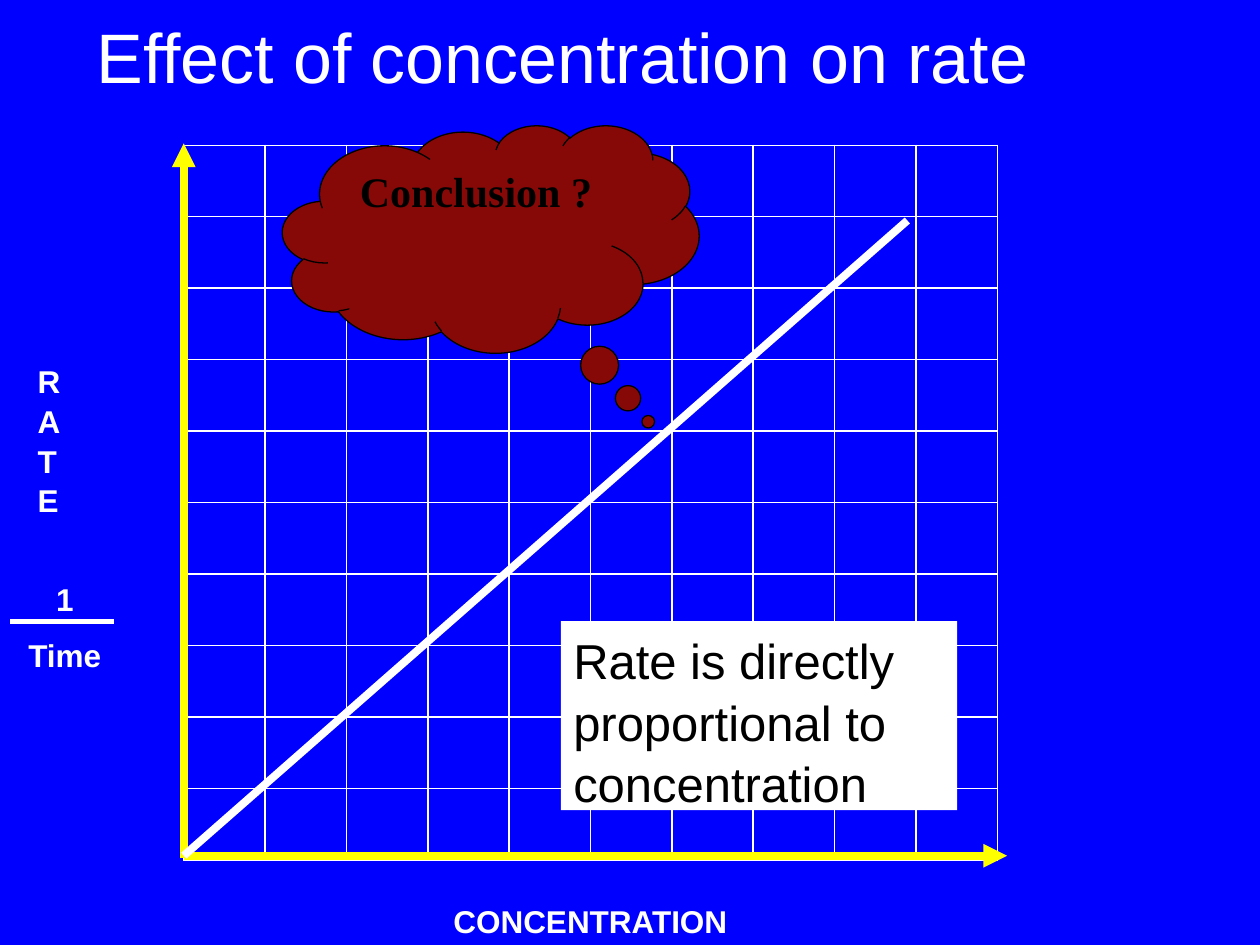
import pptx
import pptx.util
import pptx.dml.color
import pptx.enum.shapes
import pptx.enum.text
import pptx.oxml
import pptx.oxml.ns

Pt = pptx.util.Pt
SHAPE = pptx.enum.shapes.MSO_SHAPE
ALIGN = pptx.enum.text.PP_ALIGN

COLORS = {"blue": "0000FF", "white": "FFFFFF", "yellow": "FFFF00",
          "maroon": "860908", "black": "000000"}

HEADING = {"size": Pt(40), "name": "Arial", "bold": False}
LABEL = {"size": Pt(18), "name": "Arial", "bold": True}
ANSWER = {"size": Pt(28), "name": "Arial", "bold": False}
QUESTION = {"size": Pt(24), "name": "Times New Roman", "bold": True}

# paragraphs, (left, top, width, height), font, alignment
LABELS = [
    (["Effect of concentration on rate"], (48, 2, 644, 55), HEADING, ALIGN.LEFT),
    (["\v".join("RATE")], (14.4, 202.5, 79, 94), LABEL, ALIGN.LEFT),
    (["CONCENTRATION"], (252, 511, 255, 29), LABEL, ALIGN.LEFT),
    (["1", "Time"], (0, 327, 74, 61), LABEL, ALIGN.CENTER),
]
CONCLUSION = "Conclusion ?"
FINDING = "Rate is directly proportional to concentration"

GRID_COUNT = 10
GRID_BOX = (105, 83, 465, 408.5)
ORIGIN = (105, 489)
# start, end, colour, width, arrow
LINES = [
    ((105, 490.5), (105, 82), "yellow", 4.5, True),
    (ORIGIN, (575.5, 489), "yellow", 4.5, True),
    (ORIGIN, (518.5, 126), "white", 4.5, False),
]
FRACTION_BAR = ((5.75, 355), (65, 355), "white", 3, False)


def rgb(color):
    return pptx.dml.color.RGBColor.from_string(COLORS[color])


def points(values):
    return [Pt(value) for value in values]


def write(frame, paragraphs, font, color, align, spacing=1.05):
    frame.word_wrap = True
    frame.vertical_anchor = pptx.enum.text.MSO_ANCHOR.TOP
    frame.text = "\n".join(paragraphs)
    for index, paragraph in enumerate(frame.paragraphs):
        paragraph.alignment = align
        paragraph.line_spacing = spacing
        if index:
            paragraph.space_before = Pt(9)
        for key, value in font.items():
            setattr(paragraph.font, key, value)
        paragraph.font.color.rgb = rgb(color)


def add_label(slide, paragraphs, box, font, align):
    label = slide.shapes.add_textbox(*points(box))
    write(label.text_frame, paragraphs, font, "white", align)


def add_filled(slide, kind, box, color):
    shape = slide.shapes.add_shape(kind, *points(box))
    shape.shadow.inherit = False
    shape.fill.solid()
    shape.fill.fore_color.rgb = rgb(color)
    return shape


def add_line(slide, start, end, color, width, arrow):
    line = slide.shapes.add_connector(
        pptx.enum.shapes.MSO_CONNECTOR.STRAIGHT, *points(start + end))
    line.line.color.rgb = rgb(color)
    line.line.width = Pt(width)
    if arrow:
        tail = pptx.oxml.parse_xml(
            f'<a:tailEnd {pptx.oxml.ns.nsdecls("a")} type="triangle"/>')
        line.line._get_or_add_ln().append(tail)
    line._element.spPr.append(
        pptx.oxml.parse_xml(f'<a:effectLst {pptx.oxml.ns.nsdecls("a")}/>'))


def add_grid(slide):
    left, top, width, height = GRID_BOX
    grid = slide.shapes.add_table(GRID_COUNT, GRID_COUNT, *points(GRID_BOX)).table
    grid.first_row = grid.horz_banding = False
    for column in grid.columns:
        column.width = Pt(width / GRID_COUNT)
    for row in grid.rows:
        row.height = Pt(height / GRID_COUNT)
    for cell in grid.iter_cells():
        properties = cell._tc.get_or_add_tcPr()
        for side in ("lnL", "lnR", "lnT", "lnB"):
            properties.append(pptx.oxml.parse_xml(
                f'<a:{side} {pptx.oxml.ns.nsdecls("a")} w="{Pt(1)}"><a:solidFill>'
                f'<a:srgbClr val="{COLORS["white"]}"/></a:solidFill></a:{side}>'))
        cell.fill.background()


def main():
    deck = pptx.Presentation()
    deck.slide_width, deck.slide_height = Pt(720), Pt(540)
    slide = deck.slides.add_slide(deck.slide_layouts[6])
    slide.background.fill.solid()
    slide.background.fill.fore_color.rgb = rgb("blue")

    add_grid(slide)
    for label in LABELS:
        add_label(slide, *label)
    for line in LINES:
        add_line(slide, *line)

    cloud = add_filled(slide, SHAPE.CLOUD_CALLOUT, (161.5, 71.5, 238, 130), "maroon")
    cloud.adjustments[0], cloud.adjustments[1] = 0.378, 0.804
    cloud.line.color.rgb = rgb("black")
    cloud.line.width = Pt(0.75)
    write(cloud.text_frame, [CONCLUSION], QUESTION, "black", ALIGN.CENTER, 1.0)

    finding = add_filled(slide, SHAPE.RECTANGLE, (320.5, 355, 226.5, 108), "white")
    finding.line.fill.background()
    write(finding.text_frame, [FINDING], ANSWER, "black", ALIGN.LEFT)

    add_line(slide, *FRACTION_BAR)
    deck.save("out.pptx")


if __name__ == "__main__":
    main()
